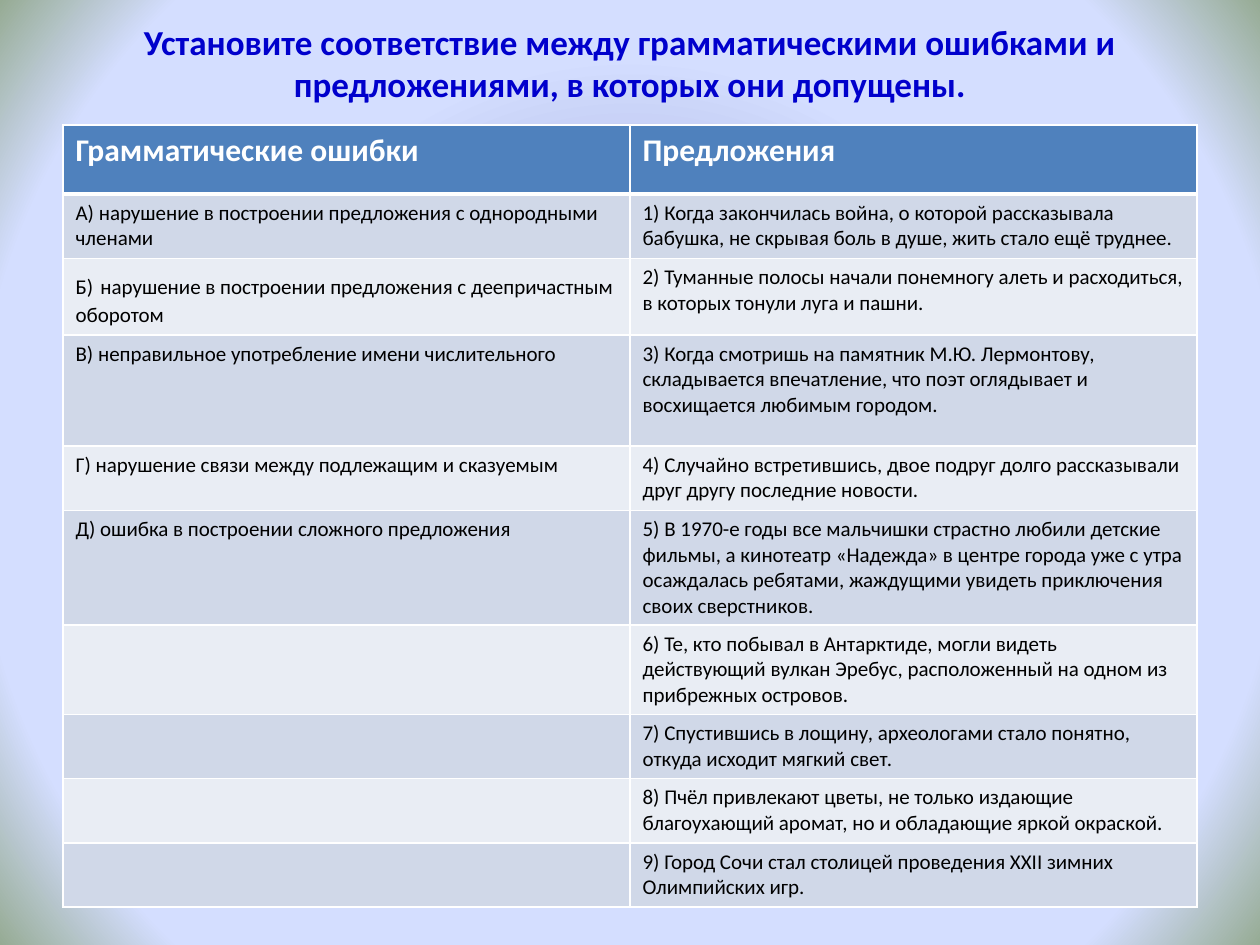
from dataclasses import dataclass

from pptx import Presentation
from pptx.dml.color import RGBColor as RGB
from pptx.enum.text import MSO_ANCHOR as Anchor, PP_ALIGN as Align
from pptx.oxml import parse_xml
from pptx.oxml.ns import nsdecls, qn
from pptx.util import Inches, Pt


@dataclass(frozen=True)
class Theme:
    font: str = "Calibri"
    title: str = "0000CC"
    header: str = "4F81BD"
    bands: tuple = ("D0D8E8", "E9EDF4")
    white: str = "FFFFFF"
    text: str = "000000"
    title_size: int = 20
    header_size: int = 18
    body_size: int = 12
    background: tuple = (
        (0, "8488C4", 72),
        (53, "D4DEFF", 100),
        (83, "D4DEFF", 100),
        (100, "96AB94", 100),
    )


THEME = Theme()

TITLE = (
    "Установите соответствие между грамматическими ошибками и "
    "предложениями, в которых они допущены."
)
HEADERS = ("Грамматические ошибки", "Предложения")
ERRORS = (
    "А) нарушение в построении предложения с однородными членами",
    ("Б)", " ", "нарушение в построении предложения с деепричастным оборотом"),
    "В) неправильное употребление имени числительного",
    "Г) нарушение связи между подлежащим и сказуемым",
    "Д) ошибка в построении сложного предложения",
)
SENTENCES = (
    "1) Когда закончилась война, о которой рассказывала бабушка, "
    "не скрывая боль в душе, жить стало ещё труднее.",
    "2) Туманные полосы начали понемногу алеть и расходиться, "
    "в которых тонули луга и пашни.",
    "3) Когда смотришь на памятник М.Ю. Лермонтову, складывается впечатление, "
    "что поэт оглядывает и восхищается любимым городом.",
    "4) Случайно встретившись, двое подруг долго рассказывали "
    "друг другу последние новости.",
    "5) В 1970-е годы все мальчишки страстно любили детские фильмы, "
    "а кинотеатр «Надежда» в центре города уже с утра осаждалась ребятами, "
    "жаждущими увидеть приключения своих сверстников.",
    "6) Те, кто побывал в Антарктиде, могли видеть действующий вулкан Эребус, "
    "расположенный на одном из прибрежных островов.",
    "7) Спустившись в лощину, археологами стало понятно, "
    "откуда исходит мягкий свет.",
    "8) Пчёл привлекают цветы, не только издающие благоухающий аромат, "
    "но и обладающие яркой окраской.",
    "9) Город Сочи стал столицей проведения XXII зимних Олимпийских игр.",
)
ROW_HEIGHTS = (0.55, 0.51, 0.61, 0.88, 0.51, 0.91, 0.71, 0.51, 0.51, 0.51)


def set_background(s):
    s.background.fill.solid()
    stops = "".join(
        f'<a:gs pos="{pos * 1000}"><a:srgbClr val="{color}">'
        f'<a:alpha val="{alpha * 1000}"/></a:srgbClr></a:gs>'
        for pos, color, alpha in THEME.background
    )
    gradient = parse_xml(
        f'<a:gradFill {nsdecls("a")} rotWithShape="1"><a:gsLst>{stops}</a:gsLst>'
        '<a:path path="circle"><a:fillToRect l="50000" t="50000" r="50000" b="50000"/>'
        "</a:path></a:gradFill>"
    )
    bg = s.element.find(".//" + qn("p:bgPr"))
    bg.replace(bg.find(qn("a:solidFill")), gradient)


def format_run(r, size, color, bold=False):
    r.font.name = THEME.font
    r.font.size = Pt(size)
    r.font.bold = bold
    r.font.color.rgb = RGB.from_string(color)


def add_title(s):
    box = s.shapes.add_textbox(Inches(0.5), Inches(0.3), Inches(9), Inches(0.69))
    tf = box.text_frame
    tf.word_wrap = True
    tf.vertical_anchor = Anchor.MIDDLE
    tf.margin_bottom = Inches(0.34)
    tf.text = TITLE
    p = tf.paragraphs[0]
    p.alignment = Align.CENTER
    format_run(p.runs[0], THEME.title_size, THEME.title, True)


def set_borders(cell, **widths):
    props = cell._tc.get_or_add_tcPr()
    for index, side in enumerate("LRTB"):
        line = parse_xml(
            f'<a:ln{side} {nsdecls("a")} w="{Pt(widths.get(side, 1))}">'
            f'<a:solidFill><a:srgbClr val="{THEME.white}"/></a:solidFill></a:ln{side}>'
        )
        props.insert(index, line)


def fill_cell(cell, content, fill, size, color, bold=False):
    cell.fill.solid()
    cell.fill.fore_color.rgb = RGB.from_string(fill)
    p = cell.text_frame.paragraphs[0]
    for part in (content,) if isinstance(content, str) else content:
        if part:
            r = p.add_run()
            r.text = part
            format_run(r, THEME.header_size if part == " " else size, color, bold)


def add_matching_table(s):
    frame = s.shapes.add_table(
        len(ROW_HEIGHTS), 2, Inches(0.5), Inches(0.99),
        Inches(9), Inches(sum(ROW_HEIGHTS)),
    )
    table = frame.table
    for row, height in zip(table.rows, ROW_HEIGHTS):
        row.height = Inches(height)
    for col, text in enumerate(HEADERS):
        cell = table.cell(0, col)
        fill_cell(cell, text, THEME.header, THEME.header_size, THEME.white, True)
        set_borders(cell, B=3)
    for row, sentence in enumerate(SENTENCES, 1):
        error = ERRORS[row - 1] if row <= len(ERRORS) else ""
        for col, content in enumerate((error, sentence)):
            cell = table.cell(row, col)
            band = THEME.bands[(row - 1) % 2]
            fill_cell(cell, content, band, THEME.body_size, THEME.text)
            set_borders(cell, T=3 if row == 1 else 1)


def main():
    prs = Presentation()
    prs.slide_width = Inches(10)
    prs.slide_height = Inches(7.5)
    s = prs.slides.add_slide(prs.slide_layouts[6])
    set_background(s)
    add_title(s)
    add_matching_table(s)
    prs.save("out.pptx")


if __name__ == "__main__":
    main()
